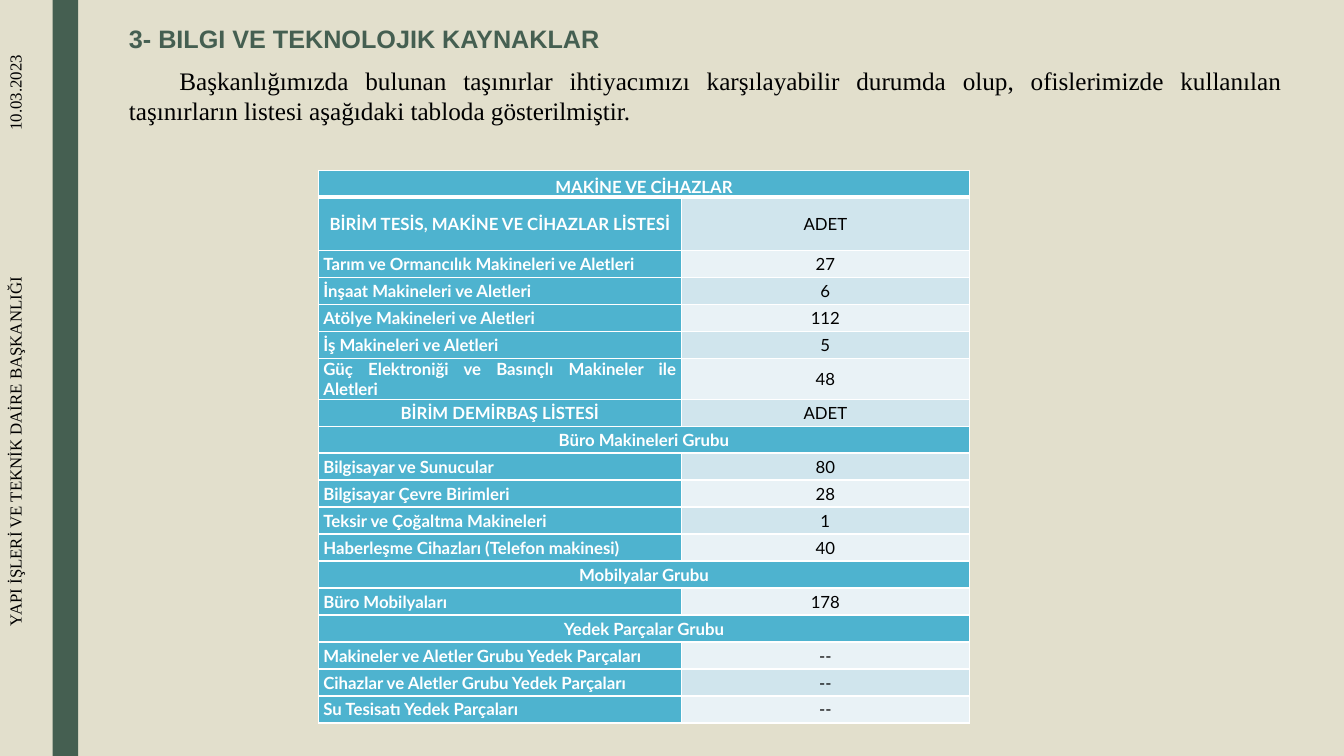
"""Build the slide listing machinery, devices and fixtures of the department."""
from dataclasses import dataclass
from typing import Optional

from lxml.etree import SubElement
from pptx import Presentation
from pptx.dml.color import RGBColor
from pptx.enum.shapes import MSO_SHAPE
from pptx.enum.text import MSO_ANCHOR, PP_ALIGN
from pptx.oxml.ns import qn
from pptx.util import Cm, Pt

COLORS = {
    "background": "E2DFCC",
    "green": "455F51",
    "black": "000000",
    "white": "FFFFFF",
    "blue": "4EB3CF",
    "band_dark": "D0E5ED",
    "band_light": "E9F2F6",
}
ROW_HEIGHT = 0.68
TALL_ROW_HEIGHT = 1.35
COLUMN_WIDTHS = (9.14, 7.26)


@dataclass(frozen=True)
class TextBox:
    text: str
    left: float
    top: float
    width: float
    height: float
    size: int
    font: str = "Times New Roman"
    color: str = "black"
    bold: bool = False
    align: PP_ALIGN = PP_ALIGN.LEFT
    rotation: int = 0
    line_spacing: Optional[float] = None
    indent: float = 0


@dataclass(frozen=True)
class Row:
    label: str
    value: Optional[str] = None
    heading: bool = False


TEXT_BOXES = [
    TextBox("10.03.2023", -1.4, 1.02, 3.91, 1.12, 12, rotation=270),
    TextBox("YAPI İŞLERİ VE TEKNİK DAİRE BAŞKANLIĞI", -5.59, 9.8, 11.81, 0.64, 12,
            rotation=270),
    TextBox("3- BILGI VE TEKNOLOJIK KAYNAKLAR", 3, 0.56, 26.67, 1.3, 18, "Arial",
            "green", True, line_spacing=0.89),
    TextBox("Başkanlığımızda bulunan taşınırlar ihtiyacımızı karşılayabilir durumda "
            "olup, ofislerimizde kullanılan taşınırların listesi aşağıdaki tabloda "
            "gösterilmiştir.", 3, 1.52, 29.57, 1.8, 18, align=PP_ALIGN.JUSTIFY,
            indent=1.27),
]

ROWS = [
    Row("MAKİNE VE CİHAZLAR", heading=True),
    Row("BİRİM TESİS, MAKİNE VE CİHAZLAR LİSTESİ", "ADET", True),
    Row("Tarım ve Ormancılık Makineleri ve Aletleri", "27"),
    Row("İnşaat Makineleri ve Aletleri", "6"),
    Row("Atölye Makineleri ve Aletleri", "112"),
    Row("İş Makineleri ve Aletleri", "5"),
    Row("Güç Elektroniği ve Basınçlı Makineler ile Aletleri", "48"),
    Row("BİRİM DEMİRBAŞ LİSTESİ", "ADET", True),
    Row("Büro Makineleri Grubu", heading=True),
    Row("Bilgisayar ve Sunucular", "80"),
    Row("Bilgisayar Çevre Birimleri", "28"),
    Row("Teksir ve Çoğaltma Makineleri", "1"),
    Row("Haberleşme Cihazları (Telefon makinesi)", "40"),
    Row("Mobilyalar Grubu", heading=True),
    Row("Büro Mobilyaları", "178"),
    Row("Yedek Parçalar Grubu", heading=True),
    Row("Makineler ve Aletler Grubu Yedek Parçaları", "--"),
    Row("Cihazlar ve Aletler Grubu Yedek Parçaları", "--"),
    Row("Su Tesisatı Yedek Parçaları", "--"),
]


def rgb(name: str) -> RGBColor:
    return RGBColor.from_string(COLORS[name])


def add_run(p, text: str, font: str, size: int, color: str, bold: bool) -> None:
    r = p.add_run()
    r.text = text
    r.font.name = font
    r.font.size = Pt(size)
    r.font.bold = bold
    r.font.color.rgb = rgb(color)


def add_text_box(s, box: TextBox) -> None:
    sp = s.shapes.add_textbox(Cm(box.left), Cm(box.top), Cm(box.width), Cm(box.height))
    sp.rotation = box.rotation
    tf = sp.text_frame
    tf.word_wrap = True
    p = tf.paragraphs[0]
    p.alignment = box.align
    if box.line_spacing:
        p.line_spacing = box.line_spacing
    if box.indent:
        p._p.get_or_add_pPr().set("indent", str(Cm(box.indent)))
    add_run(p, box.text, box.font, box.size, box.color, box.bold)


def set_borders(cell, top: float, bottom: float) -> None:
    tc_pr = cell._tc.get_or_add_tcPr()
    for side, width in {"L": 1, "R": 1, "T": top, "B": bottom}.items():
        ln = SubElement(tc_pr, qn(f"a:ln{side}"), w=str(Pt(width)))
        fill = SubElement(ln, qn("a:solidFill"))
        SubElement(fill, qn("a:srgbClr"), val=COLORS["white"])


def fill_cell(cell, text: str, fill: str, color: str, bold: bool, align: PP_ALIGN) -> None:
    cell.fill.solid()
    cell.fill.fore_color.rgb = rgb(fill)
    cell.margin_left = cell.margin_right = Cm(0.12)
    cell.margin_top = cell.margin_bottom = 0
    cell.vertical_anchor = MSO_ANCHOR.MIDDLE
    p = cell.text_frame.paragraphs[0]
    p.alignment = align
    add_run(p, text, "Lato", 12, color, bold)


def add_inventory_table(s, rows: list[Row]) -> None:
    heights = [TALL_ROW_HEIGHT if i == 1 else ROW_HEIGHT for i in range(len(rows))]
    table = s.shapes.add_table(len(rows), 2, Cm(8.03), Cm(4.29),
                               Cm(sum(COLUMN_WIDTHS)), Cm(sum(heights))).table
    for column, width in zip(table.columns, COLUMN_WIDTHS):
        column.width = Cm(width)
    for i, (row, height) in enumerate(zip(rows, heights)):
        table.rows[i].height = Cm(height)
        label, value = table.cell(i, 0), table.cell(i, 1)
        for cell in (label, value):
            set_borders(cell, 3 if i == 1 else 1, 3 if i == 0 else 1)
        align = PP_ALIGN.CENTER if row.heading else PP_ALIGN.JUSTIFY
        fill_cell(label, row.label, "blue", "white", True, align)
        if row.value is None:
            label.merge(value)
        else:
            band = "band_dark" if i % 2 else "band_light"
            fill_cell(value, row.value, band, "black", False, PP_ALIGN.CENTER)
    table.cell(0, 0).vertical_anchor = MSO_ANCHOR.BOTTOM


def add_side_bar(s, height: int) -> None:
    sp = s.shapes.add_shape(MSO_SHAPE.RECTANGLE, Cm(1.33), 0, Cm(0.64), height)
    sp.shadow.inherit = False
    sp.fill.solid()
    sp.fill.fore_color.rgb = rgb("green")
    sp.line.fill.background()


def main() -> None:
    prs = Presentation()
    prs.slide_width, prs.slide_height = Cm(33.87), Cm(19.05)
    s = prs.slides.add_slide(prs.slide_layouts[6])
    s.background.fill.solid()
    s.background.fill.fore_color.rgb = rgb("background")
    add_side_bar(s, prs.slide_height)
    add_inventory_table(s, ROWS)
    for box in TEXT_BOXES:
        add_text_box(s, box)
    prs.save("out.pptx")


if __name__ == "__main__":
    main()
